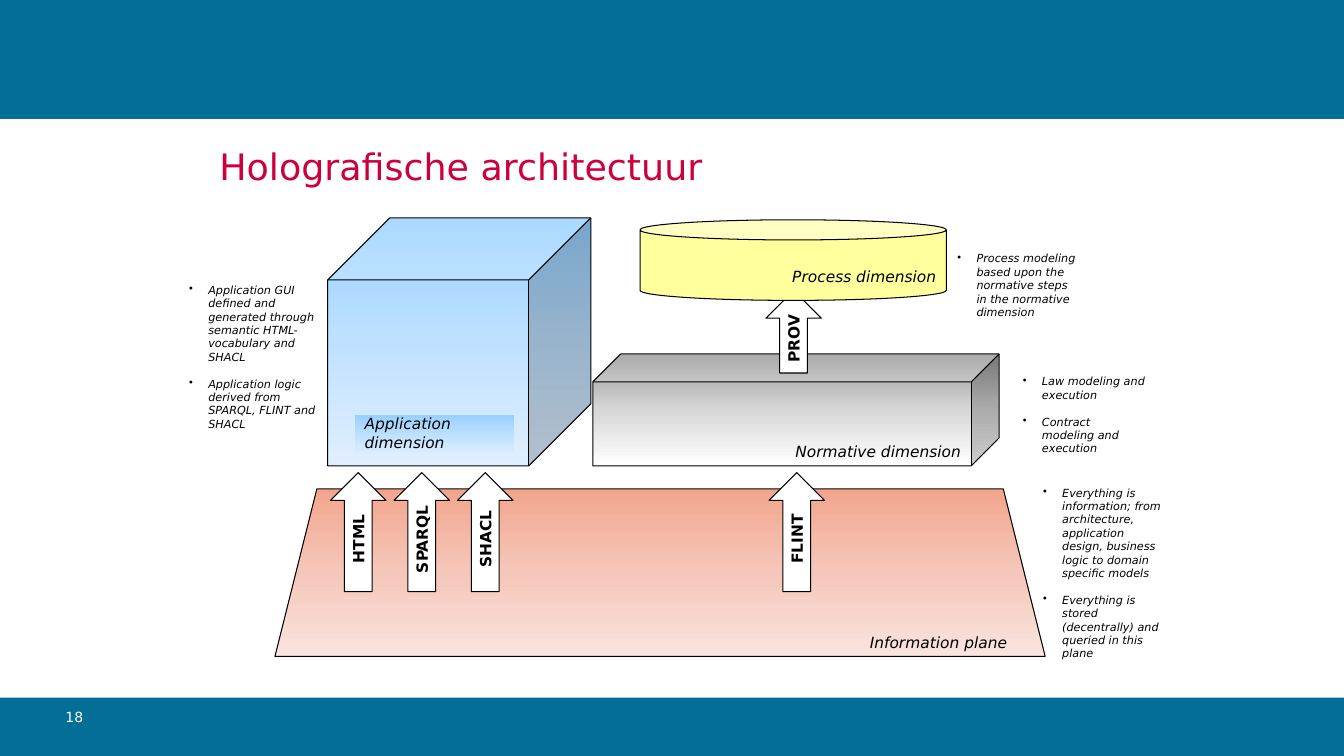
from copy import deepcopy

from lxml.etree import SubElement
from pptx import Presentation
from pptx.dml.color import RGBColor
from pptx.enum.shapes import MSO_SHAPE as Shape
from pptx.enum.text import MSO_ANCHOR as Anchor, PP_ALIGN as Align
from pptx.oxml.ns import qn
from pptx.util import Cm, Pt

FONT = "DejaVu Sans"
COLORS = {
    "band": "046F96", "title": "CC003D", "text": "000000",
    "white": "FFFFFF", "yellow": "FFFF9E",
}
GRADIENTS = {
    "gray": ("979797", "D7D7D7", "FFFFFF"),
    "red": ("F2A58C", "F5C7BA", "F9E4DE"),
    "blue": ("96D0FF", "BFE1FF", "E0EFFF"),
}
SLIDE_WIDTH, SLIDE_HEIGHT = 33.87, 19.05
BANDS = [(0, 17.58, SLIDE_WIDTH, 1.47), (0, 0, SLIDE_WIDTH, 3)]
PAGE_NUMBER = ("18", (1.4, 17.73, 2.64, 1.02))
TITLE = ("Holografische architectuur", (5.28, 3.51, 27.51, 1.57))

NORMATIVE = (Shape.CUBE, "gray", "Normative dimension", (14.94, 8.92, 10.24, 2.82))
UPPER_DIMENSIONS = [
    (Shape.TRAPEZOID, "red", "Information plane", (6.93, 12.32, 19.41, 4.22)),
    (Shape.CAN, "yellow", "Process dimension", (16.13, 5.54, 7.72, 2.03)),
    (Shape.CUBE, "blue", "", (8.26, 5.49, 6.63, 6.25)),
]
APPLICATION_LABEL = ("Application dimension", (8.94, 10.46, 4.01, 1.04))

ARROW_WIDTH = 1.4
PROV_ARROW = ("PROV", (19.3, 7.32, ARROW_WIDTH, 2.08))
APPLICATION_ARROWS = ["HTML", "SPARQL", "SHACL"]
ARROW_LEFT, ARROW_STEP, ARROW_TOP, ARROW_HEIGHT = 8.33, 1.6, 11.91, 3
FLINT_LEFT = 19.38

NOTES = [
    ((25.53, 9.32, 3.61, 1.96), [
        "Law modeling and execution",
        "Contract modeling and execution",
    ]),
    ((23.88, 6.22, 3.61, 1.96), [
        "Process modeling based upon the normative steps in the normative dimension",
    ]),
    ((26.04, 12.12, 3.61, 4.7), [
        "Everything is information; from architecture, application design, "
        "business logic to domain specific models",
        "Everything is stored (decentrally) and queried in this plane",
    ]),
    ((4.52, 7.01, 3.96, 4.01), [
        "Application GUI defined and generated through semantic HTML-vocabulary and\vSHACL",
        "Application logic derived from SPARQL, FLINT and SHACL",
    ]),
]


def rgb(name):
    return RGBColor.from_string(COLORS.get(name, name))


def paint(shape, fill):
    if fill not in GRADIENTS:
        shape.fill.solid()
        shape.fill.fore_color.rgb = rgb(fill)
        return
    shape.fill.gradient()
    shape.fill.gradient_angle = 270
    first = shape._element.spPr.find(".//" + qn("a:gs"))
    first.addnext(deepcopy(first))
    for index, (stop, color) in enumerate(zip(shape.fill.gradient_stops, GRADIENTS[fill])):
        stop.position = index / 2
        stop.color.rgb = rgb(color)


def add_block(page, kind, fill, place, outlined=True):
    shape = page.shapes.add_shape(kind, *map(Cm, place))
    shape.shadow.inherit = False
    paint(shape, fill)
    if outlined:
        shape.line.color.rgb = rgb("text")
        shape.line.width = Pt(0.75)
    else:
        shape.line.fill.background()
    return shape


def write(para, text, size, color="text", bold=False, italic=False, align=Align.LEFT):
    para.text = text
    para.alignment = align
    for span in para.runs:
        span.font.name = FONT
        span.font.size = Pt(size)
        span.font.bold = bold
        span.font.italic = italic
        span.font.color.rgb = rgb(color)


def add_text(page, place):
    box = page.shapes.add_textbox(*map(Cm, place))
    box.text_frame.word_wrap = True
    return box.text_frame


def label(shape, text, align):
    frame = shape.text_frame
    frame.vertical_anchor = Anchor.BOTTOM
    write(frame.paragraphs[0], text, 11, italic=True, align=align)


def add_dimension(page, kind, fill, text, place):
    shape = add_block(page, kind, fill, place)
    if text:
        label(shape, text, Align.RIGHT)


def add_arrow(page, text, place):
    frame = add_block(page, Shape.UP_ARROW, "white", place).text_frame
    frame._txBody.bodyPr.set("vert", "vert270")
    frame.vertical_anchor = Anchor.MIDDLE
    frame.margin_top = frame.margin_bottom = 0
    write(frame.paragraphs[0], text, 11, bold=True, align=Align.CENTER)


def add_note(page, place, items):
    frame = add_text(page, place)
    for index, item in enumerate(items):
        para = frame.add_paragraph() if index else frame.paragraphs[0]
        properties = para._p.get_or_add_pPr()
        properties.set("marL", str(Cm(0.48)))
        properties.set("indent", str(-Cm(0.48)))
        SubElement(properties, qn("a:buChar"), char="•")
        if index:
            para.space_before = Pt(9.5)
        write(para, item, 8, italic=True)


def main():
    deck = Presentation()
    deck.slide_width, deck.slide_height = Cm(SLIDE_WIDTH), Cm(SLIDE_HEIGHT)
    page = deck.slides.add_slide(deck.slide_layouts[6])

    for place in BANDS:
        add_block(page, Shape.RECTANGLE, "band", place, outlined=False)
    for (text, place), size, color in [(PAGE_NUMBER, 10, "white"), (TITLE, 26, "title")]:
        write(add_text(page, place).paragraphs[0], text, size, color)

    add_dimension(page, *NORMATIVE)
    add_arrow(page, *PROV_ARROW)
    for dimension in UPPER_DIMENSIONS:
        add_dimension(page, *dimension)
    text, place = APPLICATION_LABEL
    label(add_block(page, Shape.RECTANGLE, "blue", place, outlined=False), text, Align.LEFT)

    arrows = [(name, ARROW_LEFT + index * ARROW_STEP)
              for index, name in enumerate(APPLICATION_ARROWS)]
    for name, left in arrows + [("FLINT", FLINT_LEFT)]:
        add_arrow(page, name, (left, ARROW_TOP, ARROW_WIDTH, ARROW_HEIGHT))

    for place, items in NOTES:
        add_note(page, place, items)
    deck.save("out.pptx")


if __name__ == "__main__":
    main()
